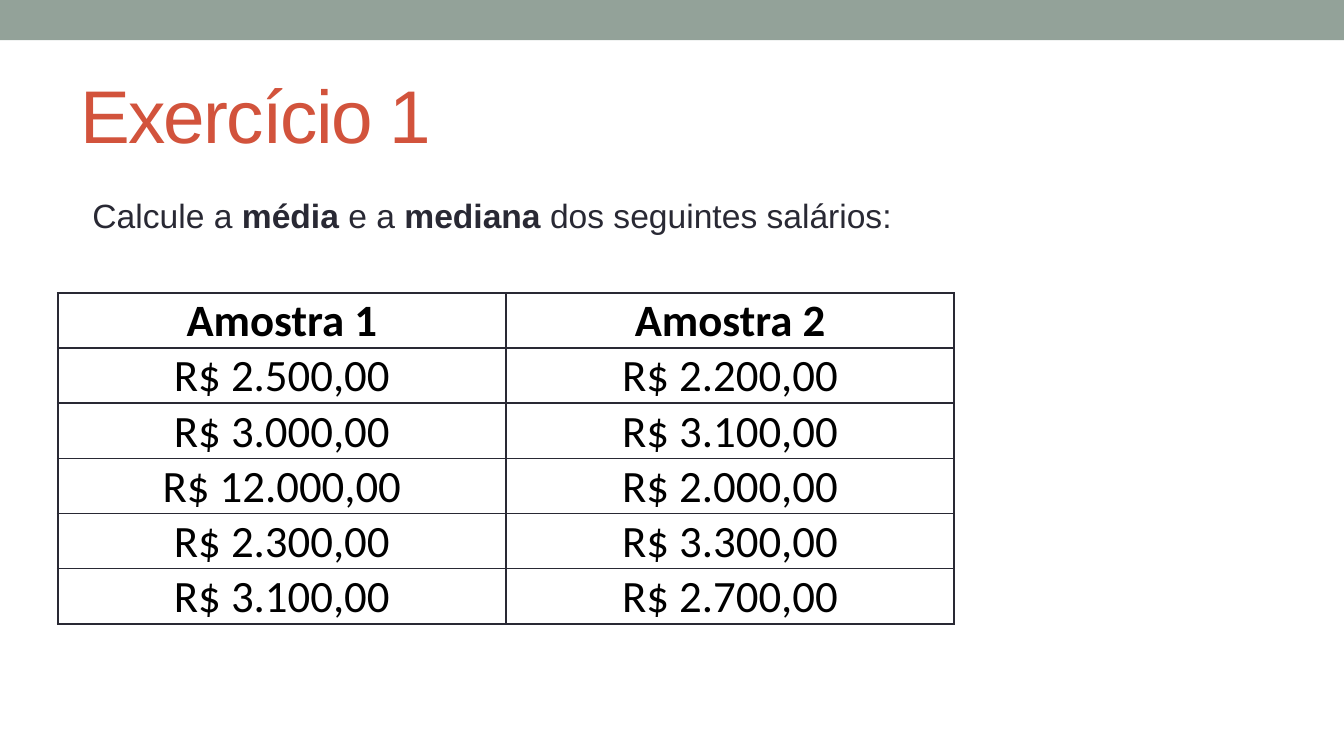
import pptx
import pptx.dml.color
import pptx.enum.shapes
import pptx.enum.text
import pptx.oxml
import pptx.oxml.ns
import pptx.util

Inches = pptx.util.Inches
Pt = pptx.util.Pt
ALIGN = pptx.enum.text.PP_ALIGN
ANCHOR = pptx.enum.text.MSO_ANCHOR

INK = "292934"
ROWS = [
    ("Amostra 1", "Amostra 2"),
    ("R$ 2.500,00", "R$ 2.200,00"),
    ("R$ 3.000,00", "R$ 3.100,00"),
    ("R$ 12.000,00", "R$ 2.000,00"),
    ("R$ 2.300,00", "R$ 3.300,00"),
    ("R$ 3.100,00", "R$ 2.700,00"),
]
TASK = [
    ("Calcule a ", False),
    ("média", True),
    (" e a ", False),
    ("mediana", True),
    (" dos seguintes salários:", False),
]


def color(code):
    """Return the colour of a hex string."""
    return pptx.dml.color.RGBColor.from_string(code)


def style(para, face, size, code):
    """Set the font of a whole paragraph."""
    para.font.name = face
    para.font.size = Pt(size)
    para.font.color.rgb = color(code)


def add_band(slide, left, top, width, height):
    """Draw the plain band along the top edge."""
    band = slide.shapes.add_shape(
        pptx.enum.shapes.MSO_SHAPE.RECTANGLE, left, top, width, height)
    band.shadow.inherit = False
    band.fill.solid()
    band.fill.fore_color.rgb = color("93A299")
    band.line.fill.background()


def add_title(slide, left, top, width, height):
    """Place and format the title."""
    title = slide.shapes.title
    title.left, title.top, title.width, title.height = left, top, width, height
    frame = title.text_frame
    frame.text = "Exercício 1"
    frame.vertical_anchor = ANCHOR.MIDDLE
    para = frame.paragraphs[0]
    para.alignment = ALIGN.LEFT
    style(para, "Arial", 40, "D2533C")
    para.runs[0]._r.get_or_add_rPr().set("spc", "-100")


def add_task(slide, left, top, width, height):
    """Write the task with its key words in bold."""
    frame = slide.shapes.add_textbox(left, top, width, height).text_frame
    frame.word_wrap = True
    frame.auto_size = pptx.enum.text.MSO_AUTO_SIZE.SHAPE_TO_FIT_TEXT
    para = frame.paragraphs[0]
    style(para, "Arial", 18, INK)
    for text, bold in TASK:
        run = para.add_run()
        run.text = text
        run.font.bold = bold


def add_edges(cell, code, width):
    """Give a cell a solid line on each side."""
    props = cell._tc.get_or_add_tcPr()
    for side in ("lnL", "lnR", "lnT", "lnB"):
        props.append(pptx.oxml.parse_xml(
            f'<a:{side} {pptx.oxml.ns.nsdecls("a")} w="{Pt(width)}">'
            f'<a:solidFill><a:srgbClr val="{code}"/></a:solidFill>'
            f'</a:{side}>'))


def fill_cell(cell, text, bold):
    """Write and format one cell."""
    add_edges(cell, INK, 1)
    cell.fill.background()
    cell.margin_left = cell.margin_right = cell.margin_top = Inches(0.01)
    cell.margin_bottom = 0
    cell.vertical_anchor = ANCHOR.BOTTOM
    cell.text = text
    para = cell.text_frame.paragraphs[0]
    para.alignment = ALIGN.CENTER
    style(para, "Calibri", 24, "000000")
    para.font.bold = bold


def add_grid(slide, left, top, width, height):
    """Build the table of salaries."""
    table = slide.shapes.add_table(
        len(ROWS), len(ROWS[0]), left, top, width, height).table
    table.first_row = table.horz_banding = False
    for row, texts in enumerate(ROWS):
        for col, text in enumerate(texts):
            fill_cell(table.cell(row, col), text, row == 0)


def main():
    """Build and save the slide."""
    deck = pptx.Presentation()
    deck.slide_width = Inches(10)
    deck.slide_height = deck.slide_width * 9 // 16
    slide = deck.slides.add_slide(deck.slide_layouts.get_by_name("Title Only"))
    add_band(slide, 0, 0, deck.slide_width, Inches(0.3))
    add_title(slide, Inches(0.5), Inches(0.44), Inches(9), Inches(0.81))
    add_task(slide, Inches(0.59), Inches(1.4), Inches(6.77), Inches(0.4))
    add_grid(slide, Inches(0.43), Inches(2.18), Inches(6.67), Inches(2.46))
    deck.save("out.pptx")


if __name__ == "__main__":
    main()
